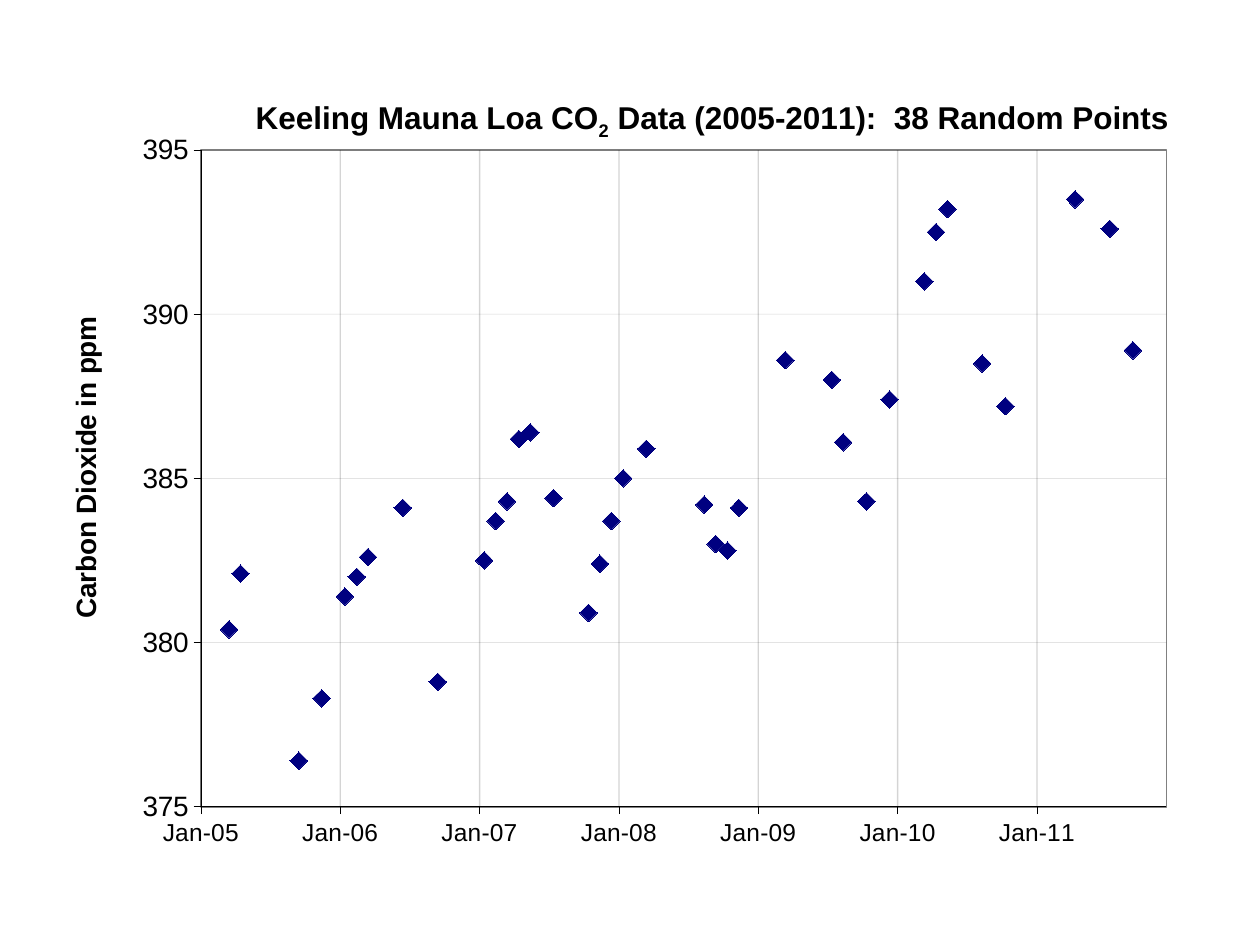
from lxml.etree import SubElement
from pptx import Presentation
from pptx.chart.data import XyChartData
from pptx.dml.color import RGBColor
from pptx.enum.chart import XL_CHART_TYPE as ChartType, XL_MARKER_STYLE as Marker, XL_TICK_MARK as Tick
from pptx.oxml import parse_xml
from pptx.oxml.ns import nsdecls, qn
from pptx.util import Inches, Pt

BLACK = RGBColor(0, 0, 0)
WHITE = RGBColor(255, 255, 255)
GREY = RGBColor(128, 128, 128)
NAVY = RGBColor(0, 0, 128)
FONT = "Arial"
MID_JANUARY_2005 = 38367
DAYS_PER_MONTH = 30.44

READINGS = [
    (2, 380.4), (3, 382.1), (8, 376.4), (10, 378.3),
    (12, 381.4), (13, 382), (14, 382.6), (17, 384.1), (20, 378.8),
    (24, 382.5), (25, 383.7), (26, 384.3), (27, 386.2), (28, 386.4),
    (30, 384.4), (33, 380.9), (34, 382.4), (35, 383.7),
    (36, 385), (38, 385.9), (43, 384.2), (44, 383), (45, 382.8), (46, 384.1),
    (50, 388.6), (54, 388), (55, 386.1), (57, 384.3), (59, 387.4),
    (62, 391), (62, 391), (63, 392.5), (64, 393.2), (67, 388.5), (69, 387.2),
    (75, 393.5), (78, 392.6), (80, 388.9),
]


def place(element, position, **settings):
    for old in element.findall(qn("c:layout")):
        element.remove(old)
    layout = parse_xml(f"<c:layout {nsdecls('c')}><c:manualLayout/></c:layout>")
    for name, value in settings.items():
        SubElement(layout[0], qn(f"c:{name}")).set("val", str(value))
    element.insert(position, layout)


def write_title(frame, pieces, size):
    para = frame.paragraphs[0]
    for text, baseline in pieces:
        span = para.add_run()
        span.text = text
        span.font.name, span.font.size, span.font.bold = FONT, Pt(size), True
        span.font.color.rgb = BLACK
        if baseline:
            span.font._element.set("baseline", str(baseline))


deck = Presentation()
deck.slide_width, deck.slide_height = Inches(10), Inches(7.5)
page = deck.slides.add_slide(deck.slide_layouts[6])

data = XyChartData()
points = data.add_series("Series 1")
for month, ppm in READINGS:
    points.add_data_point(round(MID_JANUARY_2005 + month * DAYS_PER_MONTH), ppm)
chart = page.shapes.add_chart(
    ChartType.XY_SCATTER, Inches(0.31), Inches(0.56), Inches(9.38), Inches(6.38), data
).chart
chart.has_legend = False
chart.font.name, chart.font.size, chart.font.color.rgb = FONT, Pt(10), BLACK
chart.plots[0].vary_by_categories = False

series = chart.plots[0].series[0]
series.smooth = False
series.format.line.fill.background()
series.marker.style, series.marker.size = Marker.DIAMOND, 10
series.marker.format.fill.solid()
series.marker.format.fill.fore_color.rgb = NAVY
series.marker.format.line.color.rgb = NAVY

dates, levels = chart.category_axis, chart.value_axis
for axis, low, high, step, pattern, size, grid_width in (
    (dates, 38354, 40890, 366, r"[$-409]mmm\-yy;@", 14, 0.75),
    (levels, 375, 395, 5, "0", 16, 0.25),
):
    axis.minimum_scale, axis.maximum_scale, axis.major_unit = low, high, step
    axis.major_tick_mark, axis.minor_tick_mark = Tick.OUTSIDE, Tick.NONE
    labels = axis.tick_labels
    labels.number_format, labels.number_format_is_linked = pattern, False
    labels.font.name, labels.font.size, labels.font.color.rgb = FONT, Pt(size), BLACK
    axis.format.line.color.rgb = BLACK
    axis.format.line.width = Pt(0.25)
    axis.has_major_gridlines = True
    grid = axis.major_gridlines.format.line
    grid.color.rgb = BLACK
    grid.width = Pt(grid_width)
    colour = axis.major_gridlines._xAx.find(qn("c:majorGridlines")).find(".//" + qn("a:srgbClr"))
    SubElement(colour, qn("a:alpha")).set("val", "16000")

chart.has_title = True
write_title(
    chart.chart_title.text_frame,
    [("Keeling Mauna Loa CO", 0), ("2", -25000), (" Data (2005-2011):  38 Random Points", 0)],
    18,
)
place(chart.chart_title._element, 1, xMode="edge", yMode="edge", x=0.18, y=0.03)

levels.has_title = True
write_title(levels.axis_title.text_frame, [("Carbon Dioxide in ppm", 0)], 16)
body = levels.axis_title.text_frame._txBody.find(qn("a:bodyPr"))
body.set("rot", "-5400000")
body.set("vert", "horz")
place(levels.axis_title._element, 1, xMode="edge", yMode="edge", x=0.02, y=0.3)

plot_area = chart._chartSpace.find(".//" + qn("c:plotArea"))
place(plot_area, 0, layoutTarget="inner", xMode="edge", yMode="edge", x=0.137, y=0.099, w=0.817, h=0.817)
plot_area.append(parse_xml(
    f"<c:spPr {nsdecls('c', 'a')}><a:solidFill><a:srgbClr val='{WHITE}'/></a:solidFill>"
    f"<a:ln w='{Pt(1)}'><a:solidFill><a:srgbClr val='{GREY}'/></a:solidFill></a:ln></c:spPr>"
))

deck.save("out.pptx")
